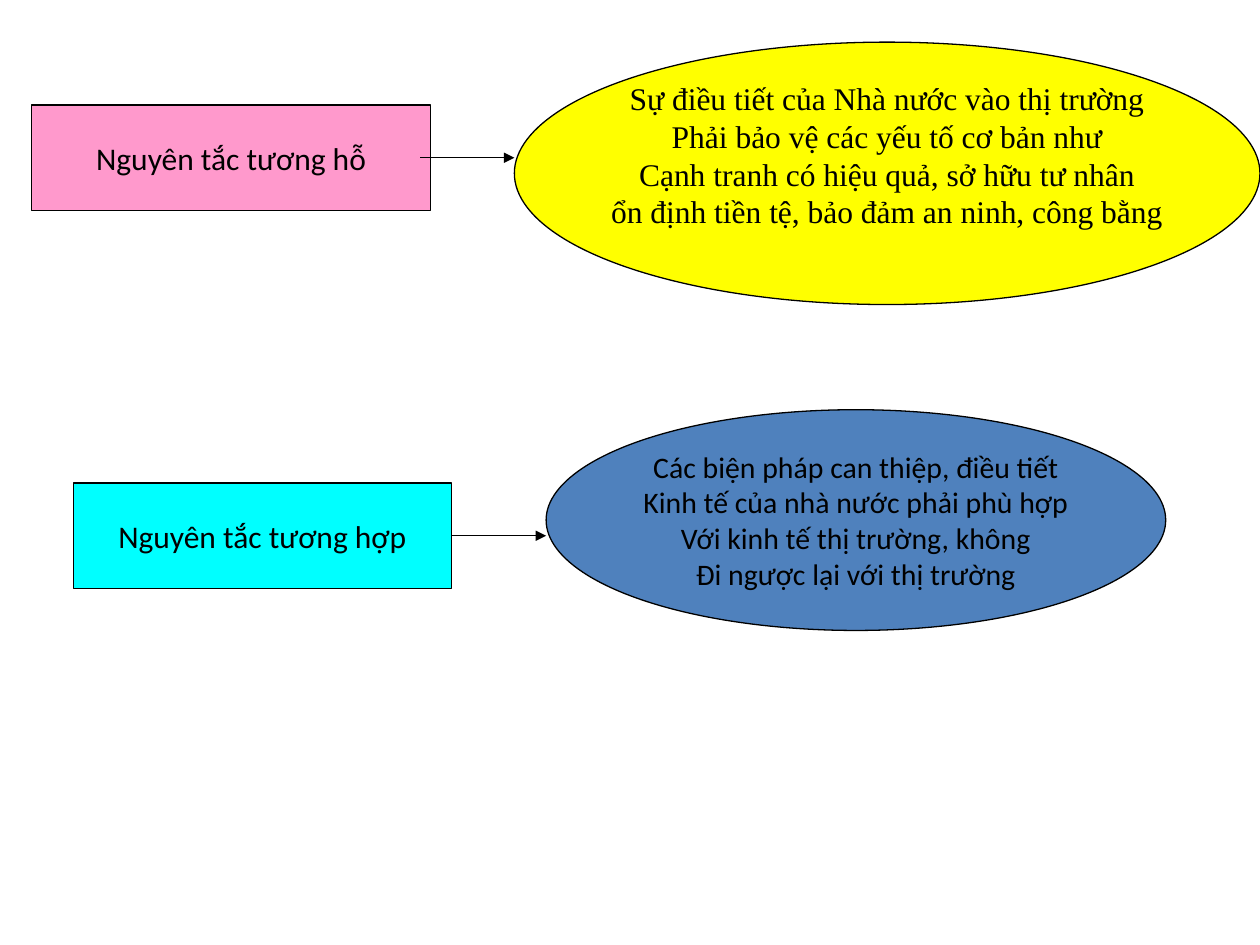
from lxml import etree
from pptx import Presentation
from pptx.dml.color import RGBColor
from pptx.enum.shapes import MSO_CONNECTOR, MSO_SHAPE
from pptx.enum.text import MSO_ANCHOR, PP_ALIGN
from pptx.oxml.ns import qn
from pptx.util import Cm, Pt

RECTANGLE, ELLIPSE = MSO_SHAPE.RECTANGLE, MSO_SHAPE.OVAL
STRAIGHT = MSO_CONNECTOR.STRAIGHT
MIDDLE, CENTER = MSO_ANCHOR.MIDDLE, PP_ALIGN.CENTER

BLACK = RGBColor(0x00, 0x00, 0x00)
PINK = RGBColor(0xFF, 0x99, 0xCC)
YELLOW = RGBColor(0xFF, 0xFF, 0x00)
CYAN = RGBColor(0x00, 0xFF, 0xFF)
BLUE = RGBColor(0x4F, 0x81, 0xBD)

SUPPORT_LINES = [
    "Sự điều tiết của Nhà nước vào thị trường",
    "Phải bảo vệ các yếu tố cơ bản như",
    "Cạnh tranh có hiệu quả, sở hữu tư nhân",
    "ổn định tiền tệ, bảo đảm an ninh, công bằng",
]
CONFORMITY_LINES = [
    "Các biện pháp can thiệp, điều tiết",
    "Kinh tế của nhà nước phải phù hợp",
    "Với kinh tế thị trường, không",
    "Đi ngược lại với thị trường",
]


class PrincipleSlide:
    line_width = Pt(0.75)
    text_format = {"name": "Calibri", "size": Pt(18)}

    def __init__(self, slide):
        self.shapes = slide.shapes

    def node(self, kind, box, fill, lines, bottom=0.13, **text_format):
        """Outlined shape with centred lines; box and bottom inset in cm."""
        node = self.shapes.add_shape(kind, *map(Cm, box))
        node.shadow.inherit = False
        node.fill.solid()
        node.fill.fore_color.rgb = fill
        node.line.color.rgb = BLACK
        node.line.width = self.line_width
        frame = node.text_frame
        frame_format = {"word_wrap": False, "vertical_anchor": MIDDLE,
                        "margin_bottom": Cm(bottom)}
        for name, value in frame_format.items():
            setattr(frame, name, value)
        frame.text = "\n".join(lines)
        for paragraph in frame.paragraphs:
            paragraph.alignment = CENTER
            paragraph.font.color.rgb = BLACK
            font = paragraph.runs[0].font
            font.color.rgb = BLACK
            for name, value in {**self.text_format, **text_format}.items():
                setattr(font, name, value)

    def arrow(self, left, right, y):
        arrow = self.shapes.add_connector(STRAIGHT, Cm(left), Cm(y), Cm(right), Cm(y))
        arrow.line.color.rgb = BLACK
        arrow.line.width = self.line_width
        etree.SubElement(arrow.line._get_or_add_ln(), qn("a:tailEnd"), type="triangle")
        etree.SubElement(arrow._element.spPr, qn("a:effectLst"))


def main():
    deck = Presentation()
    deck.slide_width, deck.slide_height = Cm(25.4), Cm(19.05)
    page = PrincipleSlide(deck.slides.add_slide(deck.slide_layouts[6]))

    page.node(RECTANGLE, (0.64, 2.12, 8.04, 2.12), PINK, ["Nguyên tắc tương hỗ"])
    page.node(ELLIPSE, (10.37, 0.85, 15.03, 5.29), YELLOW, SUPPORT_LINES,
              bottom=0.88, name="Times New Roman")
    page.node(RECTANGLE, (1.48, 9.74, 7.62, 2.12), CYAN, ["Nguyên tắc tương hợp"])
    page.node(ELLIPSE, (11.01, 8.26, 12.49, 4.45), BLUE, CONFORMITY_LINES, size=Pt(17))

    page.arrow(8.47, 10.37, 3.18)
    page.arrow(9.1, 11.01, 10.8)

    deck.save("out.pptx")


if __name__ == "__main__":
    main()
